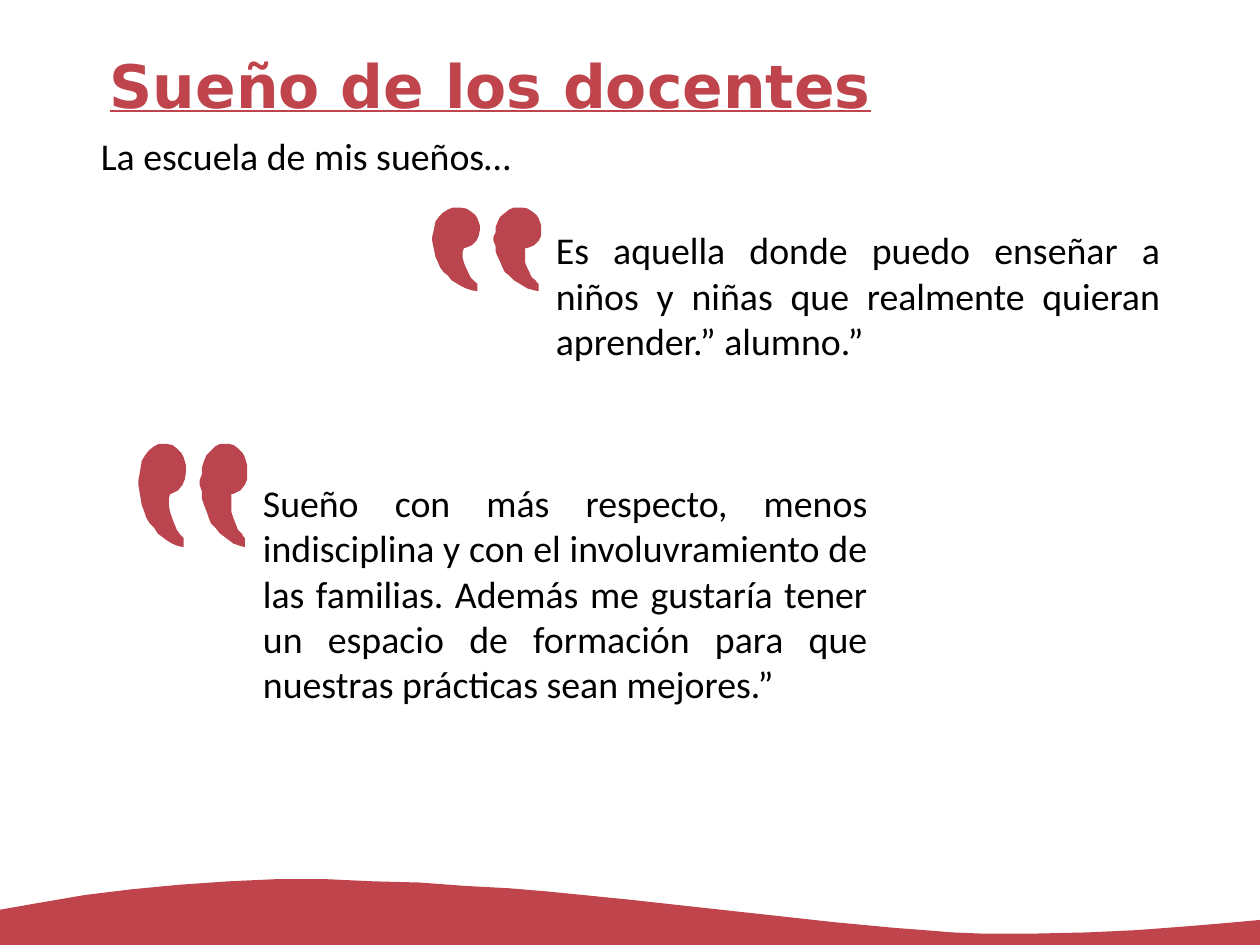
from pptx import Presentation
from pptx.dml.color import RGBColor
from pptx.enum.text import MSO_ANCHOR, MSO_AUTO_SIZE, PP_ALIGN
from pptx.util import Cm, Pt

COLORS = {"title": "BF444C", "wave": "BF444C", "quote": "BB454F", "text": "000000"}
UNIT = Cm(0.0254)  # outlines are drawn in hundredths of an inch
MARK_PITCH = 54.5

WAVE = [
    [(244, 775), (201, 777), (158, 780), (116, 784), (75, 789), (34, 796), (0, 802),
     (0, 833), (1111, 833), (1111, 823), (889, 823), (865, 823), (840, 822),
     (815, 820), (789, 818), (736, 813), (554, 793), (484, 786), (448, 783),
     (410, 781), (370, 778), (330, 777), (287, 775)],
    [(1111, 811), (1078, 814), (1042, 817), (1002, 820), (959, 822), (913, 823),
     (889, 823), (1111, 823)],
]
MARK = [
    (22, 0), (18, 0), (14, 2), (9, 6), (6, 10), (3, 15), (2, 21), (1, 27), (0, 32),
    (0, 36), (1, 42), (2, 48), (3, 54), (5, 59), (7, 65), (10, 70), (14, 74),
    (17, 79), (21, 82), (25, 85), (30, 88), (35, 90), (40, 91), (40, 83), (38, 81),
    (37, 80), (34, 76), (32, 71), (30, 66), (28, 60), (27, 55), (27, 48), (28, 44),
    (29, 44), (31, 43), (35, 41), (39, 36), (41, 31), (42, 25), (42, 21), (42, 19),
    (40, 12), (38, 8), (34, 4), (30, 1), (25, 0),
]


def add_outline(s, contours, color, left=0, top=0, stretch=1.0):
    first, *others = contours
    builder = s.shapes.build_freeform(*first[0], scale=(UNIT, UNIT * stretch))
    builder.add_line_segments(first[1:])
    for contour in others:
        builder.move_to(*contour[0])
        builder.add_line_segments(contour[1:])
    sp = builder.convert_to_shape(left, top)
    sp.shadow.inherit = False
    sp.fill.solid()
    sp.fill.fore_color.rgb = RGBColor.from_string(COLORS[color])
    sp.line.fill.background()


def add_quote_marks(s, left, top, stretch=1.0):
    marks = [[(x + i * MARK_PITCH, y) for x, y in MARK] for i in range(2)]
    add_outline(s, marks, "quote", left, top, stretch)


def format_text(sp, text, size, font, color, align):
    tf = sp.text_frame
    tf.text = text
    tf.word_wrap = True
    tf.auto_size = MSO_AUTO_SIZE.NONE
    tf.vertical_anchor = MSO_ANCHOR.TOP
    tf.margin_left = tf.margin_right = tf.margin_top = tf.margin_bottom = 0
    p = tf.paragraphs[0]
    p.alignment = align
    r = p.runs[0]
    r.font.size = Pt(size)
    r.font.name = font
    r.font.color.rgb = RGBColor.from_string(COLORS[color])
    return p


def set_title(s, text):
    sp = s.shapes.title
    sp.left, sp.top, sp.width, sp.height = Cm(2.46), Cm(1.09), Cm(23.34), Cm(1.6)
    p = format_text(sp, text, 38, "DejaVu Sans", "title", PP_ALIGN.LEFT)
    p.line_spacing = Pt(45.5)
    font = p.runs[0].font
    font.bold = font.underline = True


def add_text(s, text, left, top, width, height, align=PP_ALIGN.LEFT):
    sp = s.shapes.add_textbox(left, top, width, height)
    format_text(sp, text, 24, "Calibri", "text", align)


def main():
    prs = Presentation()
    prs.slide_width, prs.slide_height = Cm(28.22), Cm(21.16)
    s = prs.slides.add_slide(prs.slide_layouts[5])

    add_outline(s, WAVE, "wave")
    set_title(s, "Sueño de los docentes")
    add_text(s, "La escuela de mis sueños…", Cm(2.26), Cm(2.97), Cm(16.51), Cm(3.33))

    add_text(s, "Es aquella donde puedo enseñar a niños y niñas que realmente "
             "quieran aprender.” alumno.”",
             Cm(12.45), Cm(5.08), Cm(13.54), Cm(7.42), PP_ALIGN.JUSTIFY)
    add_quote_marks(s, Cm(9.68), Cm(4.65), stretch=0.81)

    add_text(s, "Sueño con más respecto, menos indisciplina y con el involuvramiento "
             "de las familias. Además me gustaría tener un espacio de formación para "
             "que nuestras prácticas sean mejores.”",
             Cm(5.89), Cm(10.74), Cm(13.54), Cm(10.36), PP_ALIGN.JUSTIFY)
    add_quote_marks(s, Cm(3.1), Cm(9.94))

    prs.save("out.pptx")


if __name__ == "__main__":
    main()
